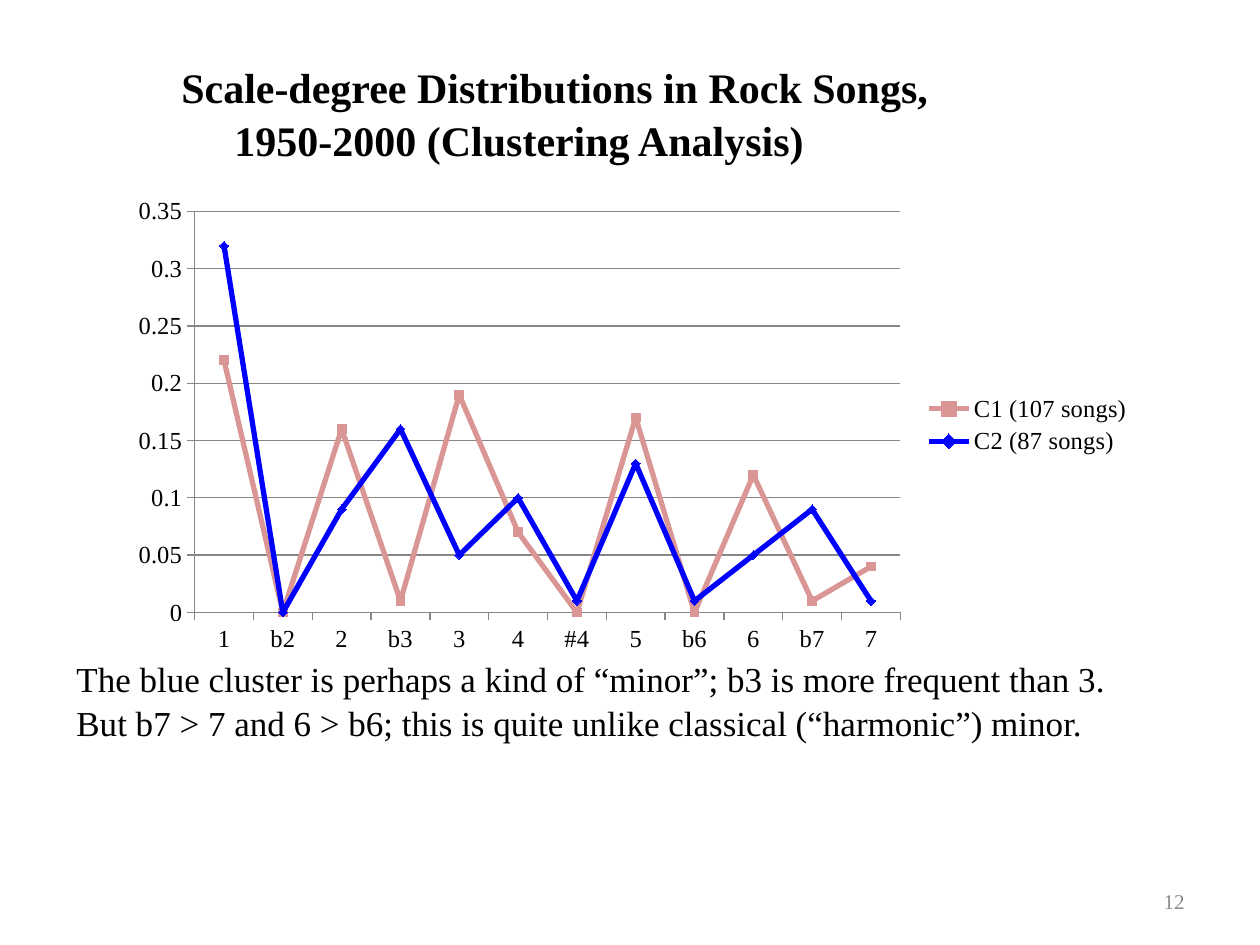
from pptx import Presentation
from pptx.chart.data import CategoryChartData
from pptx.dml.color import RGBColor
from pptx.enum.chart import XL_CHART_TYPE, XL_LEGEND_POSITION, XL_MARKER_STYLE, XL_TICK_MARK
from pptx.enum.text import MSO_ANCHOR, PP_ALIGN
from pptx.util import Emu, Pt

PX = 7257.6
FONT = "Times New Roman"
LINE_MARKERS = XL_CHART_TYPE.LINE_MARKERS
LEGEND_RIGHT = XL_LEGEND_POSITION.RIGHT
SQUARE, DIAMOND = XL_MARKER_STYLE.SQUARE, XL_MARKER_STYLE.DIAMOND
OUTSIDE = XL_TICK_MARK.OUTSIDE
TOP, MIDDLE = MSO_ANCHOR.TOP, MSO_ANCHOR.MIDDLE
LEFT, RIGHT = PP_ALIGN.LEFT, PP_ALIGN.RIGHT

DEGREES = ["1", "b2", "2", "b3", "3", "4", "#4", "5", "b6", "6", "b7", "7"]
CLUSTERS = [
    ("C1 (107 songs)", "D99694", SQUARE,
     [0.22, 0, 0.16, 0.01, 0.19, 0.07, 0, 0.17, 0, 0.12, 0.01, 0.04]),
    ("C2 (87 songs)", "0000FF", DIAMOND,
     [0.32, 0, 0.09, 0.16, 0.05, 0.1, 0.01, 0.13, 0.01, 0.05, 0.09, 0.01]),
]


def px(n):
    return Emu(round(n * PX))


def rgb(value):
    return RGBColor.from_string(value)


def set_attrs(obj, values):
    for name, value in values.items():
        setattr(obj, name, value)


def set_font(font, size, color="000000", bold=False):
    set_attrs(font, {"name": FONT, "size": Pt(size), "bold": bold})
    font.color.rgb = rgb(color)


def set_line(line, color, width):
    line.color.rgb = rgb(color)
    line.width = Pt(width)


def add_text(s, box, lines, size, color="000000", bold=False,
             align=LEFT, anchor=TOP, spacing=1.0):
    tf = s.shapes.add_textbox(*map(px, box)).text_frame
    set_attrs(tf, {"word_wrap": True, "vertical_anchor": anchor})
    for i, (text, indent) in enumerate(lines):
        p = tf.add_paragraph() if i else tf.paragraphs[0]
        set_attrs(p, {"alignment": align, "line_spacing": spacing})
        if indent:
            p._p.get_or_add_pPr().set("marL", str(px(indent)))
        r = p.add_run()
        r.text = text
        set_font(r.font, size, color, bold)


def style_axis(axis, values):
    set_attrs(axis, {"major_tick_mark": OUTSIDE, **values})
    set_font(axis.tick_labels.font, 14)
    set_line(axis.format.line, "878787", 0.75)


def style_series(series, color, symbol):
    series.smooth = False
    set_line(series.format.line, color, 3)
    marker = series.marker
    set_attrs(marker, {"style": symbol, "size": 5})
    marker.format.fill.solid()
    marker.format.fill.fore_color.rgb = rgb(color)
    set_line(marker.format.line, color, 0.75)


def add_line_chart(s, box):
    data = CategoryChartData(number_format="General")
    data.categories = DEGREES
    for name, _, _, values in CLUSTERS:
        data.add_series(name, values)
    chart = s.shapes.add_chart(LINE_MARKERS, *map(px, box), data).chart
    set_attrs(chart, {"has_title": False, "has_legend": True})
    set_font(chart.font, 10)
    set_attrs(chart.legend, {"position": LEGEND_RIGHT, "include_in_layout": False})
    set_font(chart.legend.font, 14)
    style_axis(chart.category_axis, {"has_major_gridlines": False})
    style_axis(chart.value_axis, {"has_major_gridlines": True, "minimum_scale": 0,
                                  "maximum_scale": 0.35, "major_unit": 0.05})
    set_line(chart.value_axis.major_gridlines.format.line, "878787", 0.75)
    plot = chart.plots[0]
    plot.vary_by_categories = False
    for series, (_, color, symbol, _) in zip(plot.series, CLUSTERS):
        style_series(series, color, symbol)


def main():
    prs = Presentation()
    set_attrs(prs, {"slide_width": px(1260), "slide_height": px(945)})
    s = prs.slides.add_slide(prs.slide_layouts[6])
    add_text(s, (64, 649, 1081, 97), [
        ("The blue cluster is perhaps a kind of “minor”; b3 is more frequent than 3. "
         "But b7 > 7 and 6 > b6; this is quite unlike classical (“harmonic”) minor.", 0),
    ], 20, spacing=1.05)
    add_line_chart(s, (118, 188, 1027, 474))
    add_text(s, (903, 876, 294, 50), [("12", 0)], 12, "8C8C8C",
             align=RIGHT, anchor=MIDDLE)
    add_text(s, (169, 53, 862, 115), [
        ("Scale-degree Distributions in Rock Songs,", 0),
        ("1950-2000 (Clustering Analysis)", 53),
    ], 24, bold=True, spacing=1.05)
    prs.save("out.pptx")


if __name__ == "__main__":
    main()
